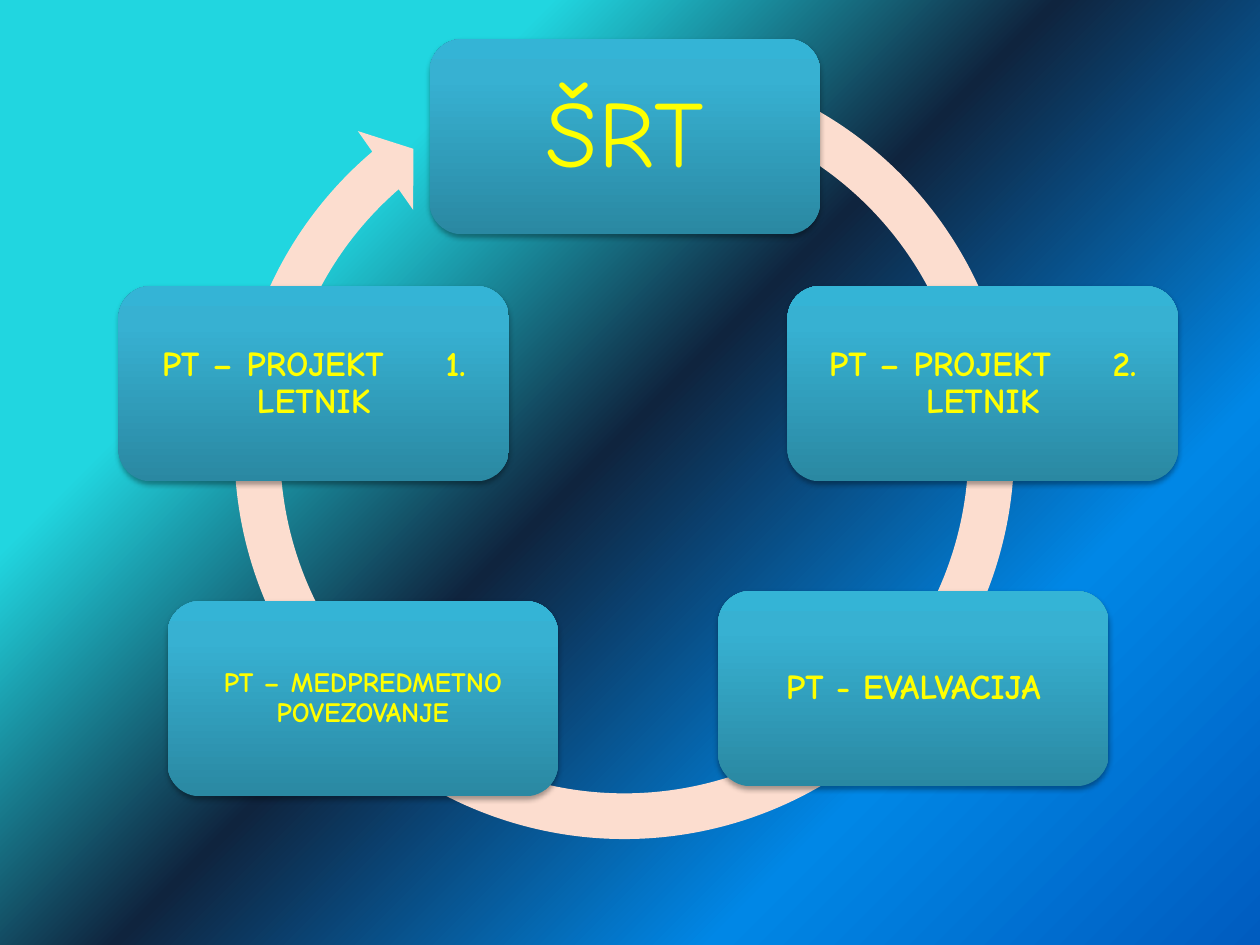
from dataclasses import dataclass

from lxml.etree import SubElement
from pptx import Presentation
from pptx.dml.color import RGBColor
from pptx.enum.shapes import MSO_SHAPE as Shape
from pptx.enum.text import MSO_ANCHOR as Anchor, PP_ALIGN as Align
from pptx.oxml.ns import qn
from pptx.util import Inches, Pt


@dataclass(frozen=True)
class Theme:
    font: str = "Comic Neue"
    text: str = "FFFF00"
    ring: str = "FCDDCF"
    shadow: str = "000000"
    box: tuple = ((0, "2A88A2"), (80, "37B1D2"), (100, "34B4D6"))
    backdrop: tuple = ((25, "21D6E0"), (48, "0F243E"), (75, "0087E6"), (100, "005CBF"))
    title_size: int = 54
    step_size: int = 20
    small_size: int = 16


def add_text(para, text, *, font, size, color, bold=False, spacing=0):
    span = para.add_run()
    span.text = text
    span.font.name = font
    span.font.size = Pt(size)
    span.font.bold = bold
    span.font.color.rgb = RGBColor.from_string(color)
    if spacing:
        span.font._element.set("spc", str(spacing * 100))


def set_gradient(fill, element, stops, angle):
    fill.gradient()
    fill.gradient_angle = angle
    stop_list = next(element.iter(qn("a:gsLst")))
    for old_stop in list(stop_list):
        stop_list.remove(old_stop)
    for position, color in stops:
        stop = SubElement(stop_list, qn("a:gs"), pos=str(position * 1000))
        SubElement(stop, qn("a:srgbClr"), val=color)


class CycleSlide:
    """Draws the parts of a cycle diagram on one slide in one theme."""

    box_width, box_height = 3.1, 1.55
    gap_spacing = 28

    def __init__(self, slide, theme):
        self.slide = slide
        self.theme = theme

    def backdrop(self):
        set_gradient(self.slide.background.fill, self.slide._element, self.theme.backdrop, 315)

    def shape(self, kind, left, top, width, height):
        shape = self.slide.shapes.add_shape(
            kind, Inches(left), Inches(top), Inches(width), Inches(height))
        shape.shadow.inherit = False
        shape.line.fill.background()
        return shape

    def ring(self, left, top, size, adjustments):
        ring = self.shape(Shape.CIRCULAR_ARROW, left, top, size, size)
        for index, value in enumerate(adjustments):
            ring.adjustments[index] = value
        ring.fill.solid()
        ring.fill.fore_color.rgb = RGBColor.from_string(self.theme.ring)

    def shadow(self, box):
        effects = box._element.spPr.find(qn("a:effectLst"))
        shadow = SubElement(effects, qn("a:outerShdw"), blurRad=str(Pt(3.1)),
                            dist=str(Pt(1.8)), dir="5400000", rotWithShape="0")
        color = SubElement(shadow, qn("a:srgbClr"), val=self.theme.shadow)
        SubElement(color, qn("a:alpha"), val="35000")

    def box(self, left, top, parts, size, inset=0.08, bold=True):
        box = self.shape(Shape.ROUNDED_RECTANGLE, left, top, self.box_width, self.box_height)
        set_gradient(box.fill, box._element, self.theme.box, 90)
        self.shadow(box)
        frame = box.text_frame
        frame.word_wrap = True
        frame.vertical_anchor = Anchor.MIDDLE
        frame.margin_left = frame.margin_right = Inches(inset)
        frame.margin_top = frame.margin_bottom = Inches(inset)
        para = frame.paragraphs[0]
        para.alignment = Align.CENTER
        para.line_spacing = 0.9
        para.space_after = Pt(0.35 * size)
        style = dict(font=self.theme.font, size=size, color=self.theme.text, bold=bold)
        for index, part in enumerate(parts):
            if index:
                add_text(para, " ", spacing=self.gap_spacing, **style)
            add_text(para, part, **style)


def main():
    deck = Presentation()
    deck.slide_width, deck.slide_height = Inches(10), Inches(7.5)
    theme = Theme()
    page = CycleSlide(deck.slides.add_slide(deck.slide_layouts[6]), theme)
    page.backdrop()
    page.ring(1.66, 0.27, 6.59, (0.055, 3.307, 137.646, 173.929, 0.058))
    page.box(3.41, 0.31, ["ŠRT"], theme.title_size, inset=0.23, bold=False)
    page.box(5.7, 4.69, ["PT - EVALVACIJA"], theme.step_size)
    for left, year in ((6.25, 2), (0.94, 1)):
        page.box(left, 2.27, ["PT – PROJEKT", f"{year}. LETNIK"], theme.step_size)
    page.box(1.33, 4.77, ["PT – MEDPREDMETNO POVEZOVANJE"], theme.small_size, inset=0.07)
    deck.save("out.pptx")


if __name__ == "__main__":
    main()
